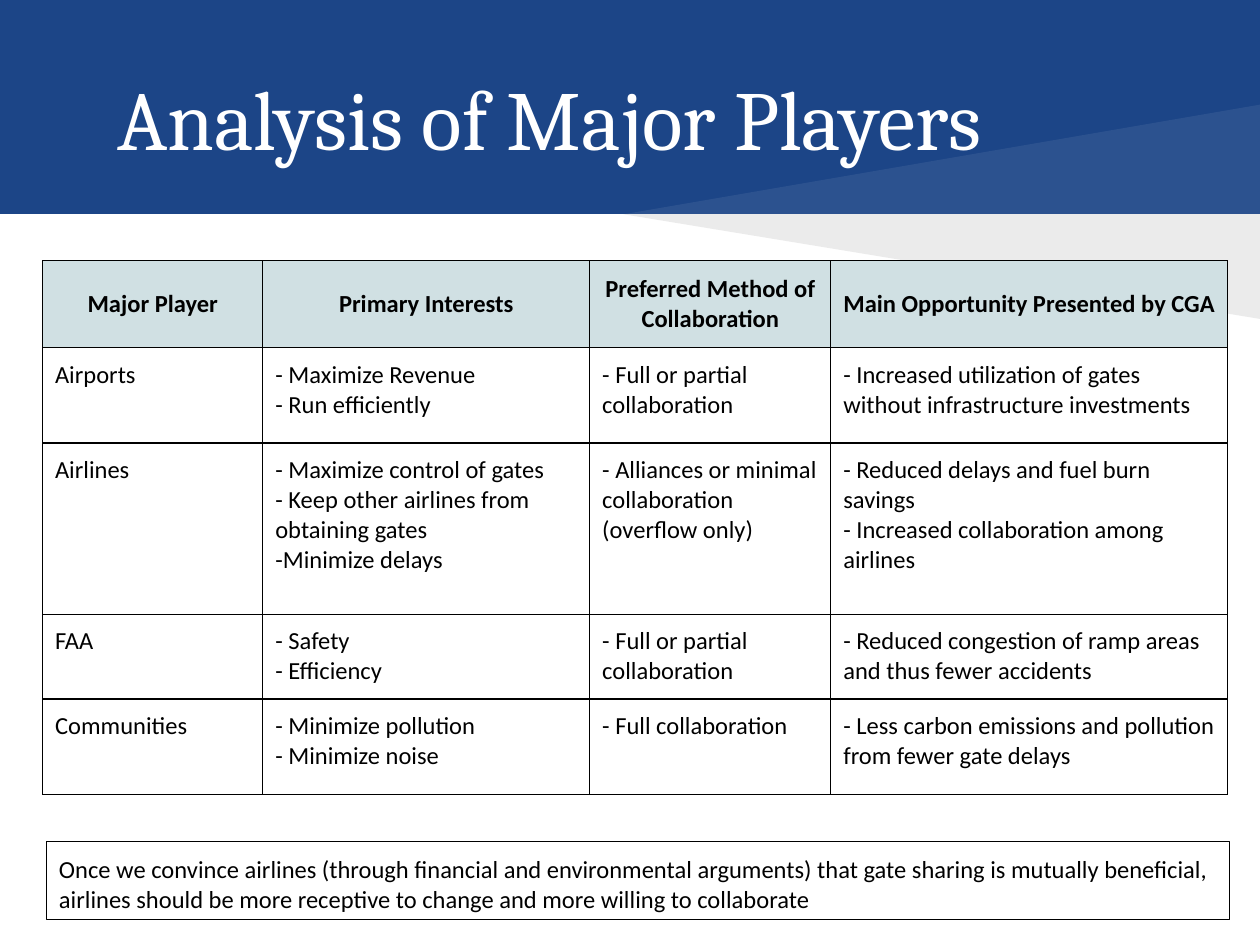
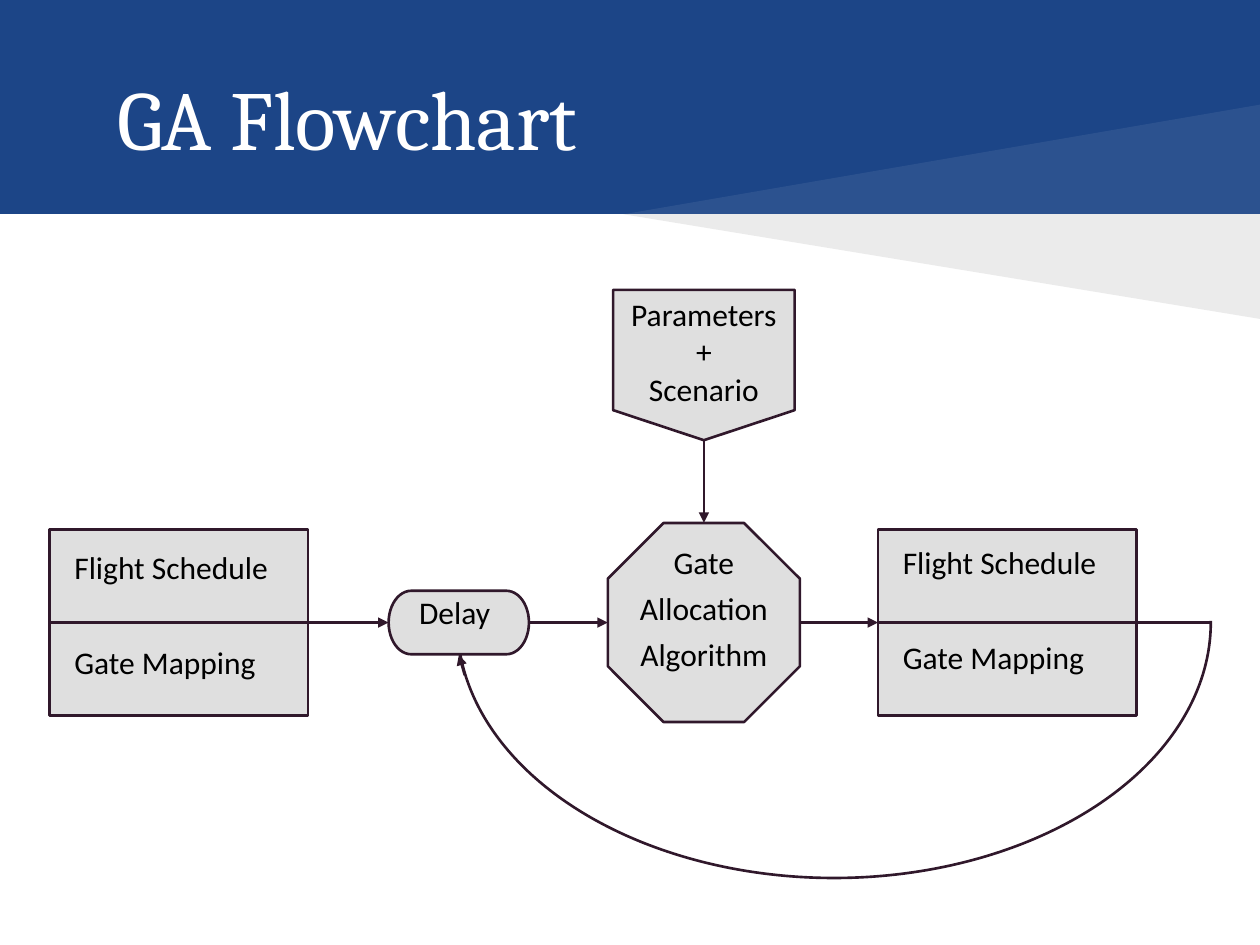
import dataclasses

import lxml.etree
import pptx
import pptx.dml.color
import pptx.enum.shapes
import pptx.enum.text
import pptx.oxml.ns
import pptx.util

Cm = pptx.util.Cm
Pt = pptx.util.Pt
Align = pptx.enum.text.PP_ALIGN
Anchor = pptx.enum.text.MSO_ANCHOR
Shape = pptx.enum.shapes.MSO_SHAPE
qn = pptx.oxml.ns.qn


@dataclasses.dataclass(frozen=True)
class Theme:
    blue: str = "1C4587"
    white: str = "FFFFFF"
    black: str = "000000"
    header: str = "D0E0E3"
    node: str = "DFDFDF"
    stroke: str = "30182B"
    title_font: str = "Cambria"
    body_font: str = "Calibri"
    title_size: int = 48
    node_size: int = 18
    table_size: int = 14
    thin: float = 0.75
    thick: float = 1.5
    inset: float = 0.25


T = Theme()
WIDTH, HEIGHT = 25.4, 19.05
BAND_BOTTOM = 4.32
FLOW_Y = 12.55      # centre line of the flowchart
GATE_X = 14.19      # centre of the algorithm column

TABLE_COLS = [4.44, 6.59, 4.86, 8.0]
TABLE_ROWS = [1.75, 1.92, 3.45, 1.71, 1.92]
PLAYERS = [
    ["Major Player", "Primary Interests", "Preferred Method of Collaboration",
     "Main Opportunity Presented by CGA"],
    ["Airports", "- Maximize Revenue\n- Run efficiently",
     "- Full or partial collaboration",
     "- Increased utilization of gates without infrastructure investments"],
    ["Airlines",
     "- Maximize control of gates\n- Keep other airlines from obtaining gates\n-Minimize delays",
     "- Alliances or minimal collaboration (overflow only)",
     "- Reduced delays and fuel burn savings\n- Increased collaboration among airlines"],
    ["FAA", "- Safety\n- Efficiency", "- Full or partial collaboration",
     "- Reduced congestion of ramp areas and thus fewer accidents"],
    ["Communities", "- Minimize pollution\n- Minimize noise", "- Full collaboration",
     "- Less carbon emissions and pollution from fewer gate delays"],
]
CONCLUSION = ("Once we convince airlines (through financial and environmental arguments) "
              "that gate sharing is mutually beneficial, airlines should be more receptive "
              "to change and more willing to collaborate")


# Formatting helpers
def rgb(value):
    return pptx.dml.color.RGBColor.from_string(value)


def set_all(target, values):
    for name, value in values.items():
        setattr(target, name, value)


def write(tf, lines, size, color=T.black, font=T.body_font, bold=False,
          align=Align.LEFT, before=()):
    """Fill a text frame; before holds the space above each paragraph."""
    for i, line in enumerate(lines):
        p = tf.paragraphs[0] if i == 0 else tf.add_paragraph()
        p.alignment = align
        if before:
            p.space_before = Pt(before[i])
        r = p.add_run()
        r.text = line
        set_all(r.font, {"size": Pt(size), "name": font, "bold": bold})
        r.font.color.rgb = rgb(color)


def frame(tf, anchor=Anchor.TOP):
    set_all(tf, {"word_wrap": True, "vertical_anchor": anchor,
                 **{f"margin_{side}": Cm(T.inset)
                    for side in ("left", "right", "top", "bottom")}})
    return tf


def paint(sp, fill=None, line=None, width=T.thick):
    sp.shadow.inherit = False
    if fill:
        sp.fill.solid()
        sp.fill.fore_color.rgb = rgb(fill)
    else:
        sp.fill.background()
    if line:
        sp.line.color.rgb = rgb(line)
        sp.line.width = Pt(width)
    else:
        sp.line.fill.background()


# Elements
def add_shape(shapes, kind, box, fill=None, line=None, width=T.thick):
    sp = shapes.add_shape(kind, *map(Cm, box))
    paint(sp, fill, line, width)
    return sp


def add_text(s, box, lines, size, anchor=Anchor.TOP, **style):
    sp = s.shapes.add_textbox(*map(Cm, box))
    write(frame(sp.text_frame, anchor), lines, size, **style)
    return sp


def add_line(shapes, start, end, arrow=False):
    sp = shapes.add_connector(pptx.enum.shapes.MSO_CONNECTOR.STRAIGHT,
                              *map(Cm, start + end))
    sp.line.color.rgb = rgb(T.stroke)
    sp.line.width = Pt(T.thick)
    if arrow:
        lxml.etree.SubElement(sp.line._get_or_add_ln(), qn("a:tailEnd"), type="triangle")
    lxml.etree.SubElement(sp._element.spPr, qn("a:effectLst"))


def add_wedge(s, edge_y, color, opacity):
    """Translucent triangle from the band's middle to the right slide edge."""
    fb = s.shapes.build_freeform(Cm(WIDTH), Cm(BAND_BOTTOM))
    fb.add_line_segments([(Cm(12.57), Cm(BAND_BOTTOM)), (Cm(WIDTH), Cm(edge_y))])
    sp = fb.convert_to_shape()
    paint(sp, color)
    clr = sp._element.spPr.find(".//" + qn("a:srgbClr"))
    lxml.etree.SubElement(clr, qn("a:alpha"), val=str(opacity * 1000))


def add_slide(prs):
    """Blue slide with the white content area and the two wedges."""
    s = prs.slides.add_slide(prs.slide_layouts[6])
    s.background.fill.solid()
    s.background.fill.fore_color.rgb = rgb(T.blue)
    add_shape(s.shapes, Shape.RECTANGLE,
              (0, BAND_BOTTOM, WIDTH, HEIGHT - BAND_BOTTOM), T.white)
    add_wedge(s, 2.11, T.white, 7)
    add_wedge(s, 6.43, T.black, 8)
    return s


def add_title(s, text):
    add_text(s, (2.11, 0.76, 22.02, 3.18), [text], T.title_size, Anchor.MIDDLE,
             color=T.white, font=T.title_font)


def add_borders(cell):
    tc_pr = cell._tc.get_or_add_tcPr()
    for i, side in enumerate(("lnL", "lnR", "lnT", "lnB")):
        ln = lxml.etree.Element(qn(f"a:{side}"), w=str(Pt(T.thin)))
        fill = lxml.etree.SubElement(ln, qn("a:solidFill"))
        lxml.etree.SubElement(fill, qn("a:srgbClr"), val=T.black)
        tc_pr.insert(i, ln)


def add_table(s, left, top, rows):
    table = s.shapes.add_table(
        len(rows), len(TABLE_COLS), Cm(left), Cm(top),
        Cm(sum(TABLE_COLS)), Cm(sum(TABLE_ROWS))).table
    set_all(table, {"first_row": False, "horz_banding": False})
    for col, width in zip(table.columns, TABLE_COLS):
        col.width = Cm(width)
    for row, height, texts in zip(table.rows, TABLE_ROWS, rows):
        row.height = Cm(height)
        head = texts is rows[0]
        for cell, text in zip(row.cells, texts):
            set_all(cell, {f"margin_{side}": Cm(T.inset)
                           for side in ("left", "right", "top", "bottom")})
            cell.vertical_anchor = Anchor.MIDDLE if head else Anchor.TOP
            write(cell.text_frame, text.split("\n"), T.table_size, bold=head,
                  align=Align.CENTER if head else Align.LEFT)
            if head:
                cell.fill.solid()
                cell.fill.fore_color.rgb = rgb(T.header)
            else:
                cell.fill.background()
            add_borders(cell)


def add_node(s, kind, center, size):
    (x, y), (w, h) = center, size
    return add_shape(s.shapes, kind, (x - w / 2, y - h / 2, w, h), T.node, T.stroke)


def add_data_box(s, left, text_top):
    """Box split by a line: schedule above, mapping below."""
    width, height = 5.21, 3.76
    group = s.shapes.add_group_shape()
    add_shape(group.shapes, Shape.RECTANGLE,
              (left, FLOW_Y - height / 2, width, height), T.node, T.stroke)
    add_line(group.shapes, (left, FLOW_Y), (left + width, FLOW_Y))
    add_text(s, (left + 0.25, text_top, 4.7, 3.73), ["Flight Schedule", "Gate Mapping"],
             T.node_size, before=(4.8, 32.8))


# Slides
def players_slide(prs):
    s = add_slide(prs)
    add_title(s, "Analysis of Major Players")
    add_table(s, 0.86, 5.26, PLAYERS)
    note = add_shape(s.shapes, Shape.RECTANGLE, (0.94, 16.97, 23.85, 1.57),
                     line=T.black, width=T.thin)
    write(frame(note.text_frame), [CONCLUSION], T.table_size)


def flowchart_slide(prs):
    s = add_slide(prs)
    # Feedback loop
    arc = add_shape(s.shapes, Shape.ARC, (9.22, 7.39, 15.19, 10.31), line=T.stroke)
    arc.adjustments[0], arc.adjustments[1] = 215.88, 105.03
    add_title(s, "GA Flowchart")

    # Nodes
    add_data_box(s, 1.0, 10.8)
    add_data_box(s, 17.7, 10.69)
    octagon = add_node(s, Shape.OCTAGON, (GATE_X, FLOW_Y), (3.87, 4.01))
    octagon.adjustments[0] = 0.29
    add_node(s, Shape.FLOWCHART_TERMINATOR, (9.25, FLOW_Y), (2.83, 1.28))
    add_node(s, Shape.FLOWCHART_OFFPAGE_CONNECTOR, (GATE_X, 7.36), (3.66, 3.03))

    # Labels
    add_text(s, (8.2, 11.71, 2.06, 1.12), ["Delay"], T.node_size, before=(4.8,))
    add_text(s, (11.84, 10.69, 4.7, 3.73), ["Gate", "Allocation", "Algorithm"],
             T.node_size, align=Align.CENTER, before=(4.8,) * 3)
    add_text(s, (12.36, 5.69, 3.66, 2.24), ["Parameters", "+", "Scenario"],
             T.node_size, align=Align.CENTER)

    # Connectors
    for x1, x2 in ((6.21, 7.83), (10.66, 12.25), (16.12, 17.7)):
        add_line(s.shapes, (x1, FLOW_Y), (x2, FLOW_Y), arrow=True)
    add_line(s.shapes, (22.91, FLOW_Y), (24.41, FLOW_Y))
    add_line(s.shapes, (9.37, 13.61), (9.25, 13.2), arrow=True)
    add_line(s.shapes, (GATE_X, 8.87), (GATE_X, 10.54), arrow=True)


def main():
    prs = pptx.Presentation()
    set_all(prs, {"slide_width": Cm(WIDTH), "slide_height": Cm(HEIGHT)})
    players_slide(prs)
    flowchart_slide(prs)
    prs.save("out.pptx")


if __name__ == "__main__":
    main()
